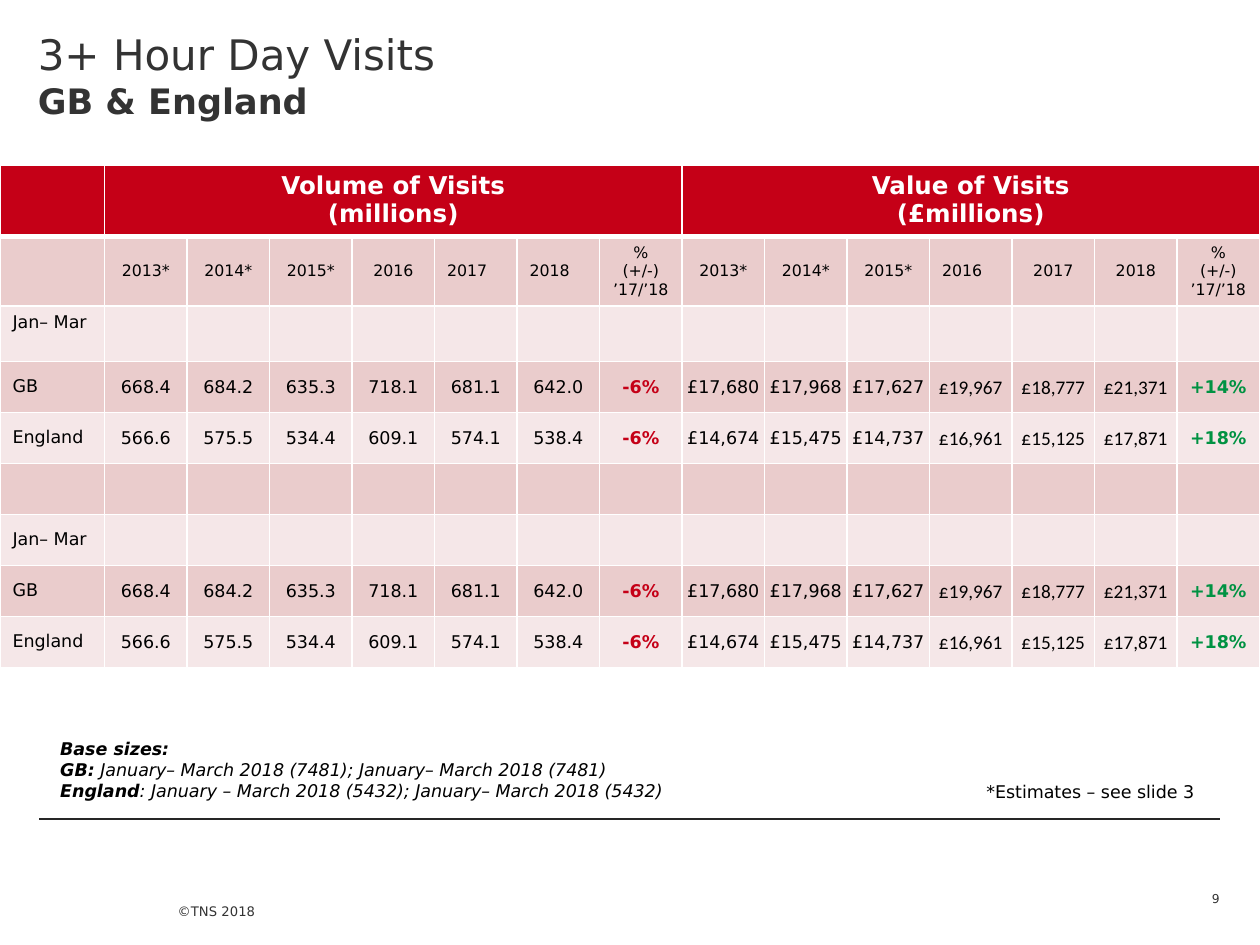
import copy

import lxml.etree
import pptx
import pptx.dml.color
import pptx.enum.shapes
import pptx.enum.text
import pptx.oxml.ns
import pptx.util

Inches = pptx.util.Inches
RGBColor = pptx.dml.color.RGBColor
ALIGN = pptx.enum.text.PP_ALIGN
ANCHOR = pptx.enum.text.MSO_ANCHOR

RED = RGBColor(0xC5, 0x00, 0x17)
GREEN = RGBColor(0x00, 0x92, 0x42)
PINK = RGBColor(0xEA, 0xCC, 0xCC)
PALE_PINK = RGBColor(0xF5, 0xE7, 0xE8)
WHITE = RGBColor(0xFF, 0xFF, 0xFF)
BLACK = RGBColor(0x00, 0x00, 0x00)
GREY = RGBColor(0x33, 0x33, 0x33)
RULE_GREY = RGBColor(0x26, 0x26, 0x26)

FONT = "DejaVu Sans"
TEXT_INSETS = (0.1, 0.05, 0.1, 0.05)
VALUE_INSETS = (0.01, 0.01, 0.01, 0)

CHANGE = ["%", "(+/-) ’17/’18"]
YEARS = ["2013*", "2014*", "2015*", "2016", "2017", "2018", CHANGE]
LEFT_YEAR_COLUMNS = {5, 6, 11}
CHANGE_COLUMNS = {7: RED, 14: GREEN}
CALIBRI_COLUMNS = {11, 12, 13}

PERIOD = ["Jan– Mar"]
GB = ["GB", "668.4", "684.2", "635.3", "718.1", "681.1", "642.0", "-6%",
      "£17,680", "£17,968", "£17,627", "£19,967", "£18,777", "£21,371", "+14%"]
ENGLAND = ["England", "566.6", "575.5", "534.4", "609.1", "574.1", "538.4", "-6%",
           "£14,674", "£15,475", "£14,737", "£16,961", "£15,125", "£17,871", "+18%"]
BODY_ROWS = [PERIOD, GB, ENGLAND, [], PERIOD, GB, ENGLAND]

COLUMN_COUNT = 15
LABEL_WIDTH = 0.83
ROW_HEIGHTS = [0.56, 0.55, 0.44] + [2.43 / 6] * 6


def write(para, text, size=10, color=BLACK, font=FONT, bold=False, italic=False):
    """Append text to a paragraph, turning newlines into line breaks."""
    for number, line in enumerate(text.split("\n")):
        if number:
            para.add_line_break()
            para._p[-1].append(copy.deepcopy(span._r.rPr))
        span = para.add_run()
        span.text = line
        span.font.size = pptx.util.Pt(size)
        span.font.color.rgb = color
        span.font.name = font
        span.font.bold = bold
        span.font.italic = italic


def add_box(page, left, top, width, height, paragraphs, insets=TEXT_INSETS,
            anchor=ANCHOR.TOP, align=ALIGN.LEFT, wrap=True):
    """Add a text box whose paragraphs are lists of (text, format) pairs."""
    box = page.shapes.add_textbox(*map(Inches, (left, top, width, height)))
    frame = box.text_frame
    frame.word_wrap = wrap
    frame.vertical_anchor = anchor
    (frame.margin_left, frame.margin_top,
     frame.margin_right, frame.margin_bottom) = map(Inches, insets)
    for number, spans in enumerate(paragraphs):
        para = frame.add_paragraph() if number else frame.paragraphs[0]
        para.alignment = align
        for text, style in spans:
            write(para, text, **style)


def add_rule(page, left, top, right):
    """Add the thin horizontal rule above the footer."""
    rule = page.shapes.add_connector(
        pptx.enum.shapes.MSO_CONNECTOR.STRAIGHT,
        Inches(left), Inches(top), Inches(right), Inches(top))
    rule.line.color.rgb = RULE_GREY
    rule.line.width = pptx.util.Pt(0.75)
    lxml.etree.SubElement(rule._element.spPr, pptx.oxml.ns.qn("a:effectLst"))


def set_border(cell, side, points):
    """Draw one white cell border."""
    qn = pptx.oxml.ns.qn
    line = lxml.etree.SubElement(cell._tc.get_or_add_tcPr(), qn(f"a:ln{side}"),
                                 w=str(pptx.util.Pt(points)))
    fill = lxml.etree.SubElement(line, qn("a:solidFill"))
    lxml.etree.SubElement(fill, qn("a:srgbClr"), val=str(WHITE))


def fill_cell(cell, lines, align=ALIGN.LEFT, anchor=ANCHOR.MIDDLE,
              insets=TEXT_INSETS, **style):
    """Write lines into a table cell, one paragraph each."""
    (cell.margin_left, cell.margin_top,
     cell.margin_right, cell.margin_bottom) = map(Inches, insets)
    cell.vertical_anchor = anchor
    for number, line in enumerate(lines):
        frame = cell.text_frame
        para = frame.add_paragraph() if number else frame.paragraphs[0]
        para.alignment = align
        write(para, line, **style)


def value_style(column):
    """Return the text format of a value column."""
    if column in CHANGE_COLUMNS:
        return {"color": CHANGE_COLUMNS[column], "bold": True}
    if column in CALIBRI_COLUMNS:
        return {"size": 11, "font": "Calibri"}
    return {}


def paint_grid(table):
    """Give every cell its fill and white borders."""
    for row_number in range(len(ROW_HEIGHTS)):
        color = RED if row_number == 0 else (PALE_PINK, PINK)[row_number % 2]
        for column in range(COLUMN_COUNT):
            cell = table.cell(row_number, column)
            for side in "LRTB":
                thick = (row_number, side) in {(0, "B"), (1, "T")}
                set_border(cell, side, 3 if thick else 1)
            cell.fill.solid()
            cell.fill.fore_color.rgb = color


def add_visits_table(page):
    """Add the table of visit volumes and values."""
    table = page.shapes.add_table(
        len(ROW_HEIGHTS), COLUMN_COUNT, Inches(0), Inches(1.31),
        Inches(10), Inches(sum(ROW_HEIGHTS))).table
    table.first_row = table.horz_banding = False
    value_width = (10 - LABEL_WIDTH) / (COLUMN_COUNT - 1)
    for number, column in enumerate(table.columns):
        column.width = Inches(value_width if number else LABEL_WIDTH)
    for row, height in zip(table.rows, ROW_HEIGHTS):
        row.height = Inches(height)
    paint_grid(table)

    groups = [["Volume of Visits", "(millions)"], ["Value of Visits", "(£millions)"]]
    for first, lines in zip((1, 8), groups):
        table.cell(0, first).merge(table.cell(0, first + 6))
        fill_cell(table.cell(0, first), lines, align=ALIGN.CENTER,
                  anchor=ANCHOR.TOP, size=14, color=WHITE, bold=True)

    for column, year in enumerate(YEARS * 2, start=1):
        lines = year if isinstance(year, list) else [year]
        align = ALIGN.LEFT if column in LEFT_YEAR_COLUMNS else ALIGN.CENTER
        fill_cell(table.cell(1, column), lines, align=align, size=9)

    for row_number, texts in enumerate(BODY_ROWS, start=2):
        for column in range(COLUMN_COUNT):
            cell = table.cell(row_number, column)
            lines = texts[column:column + 1]
            if column == 0 and lines:
                anchor = ANCHOR.TOP if row_number == 2 else ANCHOR.MIDDLE
                fill_cell(cell, lines, anchor=anchor)
            else:
                fill_cell(cell, lines, align=ALIGN.CENTER, insets=VALUE_INSETS,
                          **value_style(column))


def main():
    """Build the day visits slide."""
    deck = pptx.Presentation()
    deck.slide_width, deck.slide_height = Inches(10), Inches(7.5)
    page = deck.slides.add_slide(deck.slide_layouts[6])

    add_box(page, 1.41, 6.92, 0.82, 0.58,
            [[("©TNS 2018", {"size": 7.5, "color": GREY})]],
            insets=(0, 0, 0, 0.29), anchor=ANCHOR.BOTTOM)
    add_rule(page, 0.31, 6.5, 9.68)
    add_box(page, 0, 0, 5.55, 1.4,
            [[("3+ Hour Day Visits\n", {"size": 24, "color": GREY}),
              ("GB & England", {"size": 20, "color": GREY, "bold": True})]],
            insets=(0.3, 0.23, 0.3, 0))
    add_visits_table(page)

    strong = {"bold": True, "italic": True}
    plain = {"italic": True}
    add_box(page, 0.38, 5.81, 8.44, 0.61, [
        [("Base sizes:\nGB:", strong),
         (" January– March 2018 (7481); January– March 2018 (7481)", plain)],
        [("England", strong),
         (": January – March 2018 (5432); January– March 2018 (5432)", plain)]])
    add_box(page, 7.73, 6.15, 1.92, 0.27,
            [[("*Estimates – see slide 3", {})]], wrap=False)
    add_box(page, 9.13, 6.92, 0.55, 0.27, [[("9", {"size": 7, "color": GREY})]],
            insets=(0, 0, 0, 0), anchor=ANCHOR.BOTTOM, align=ALIGN.RIGHT)
    deck.save("out.pptx")


if __name__ == "__main__":
    main()
